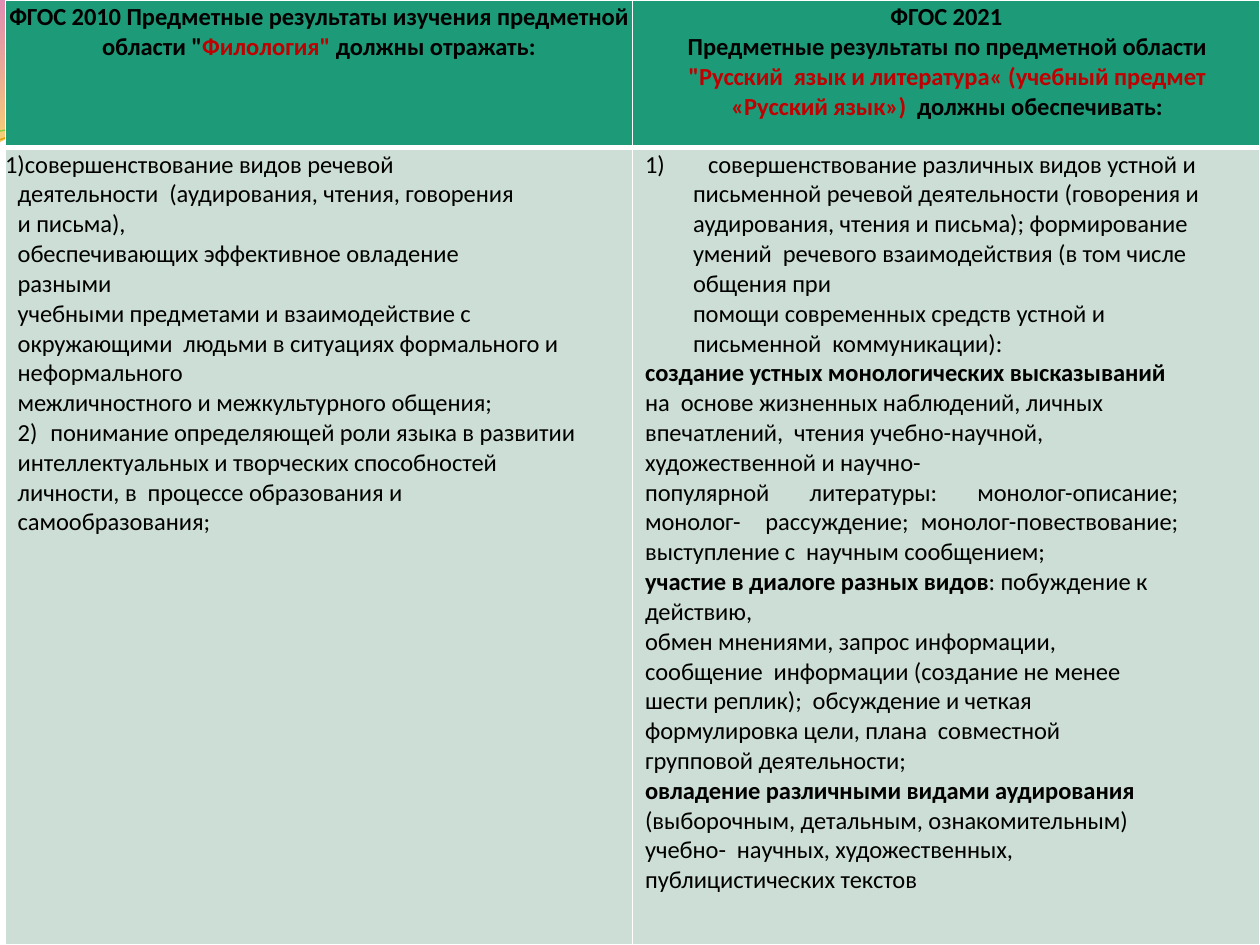
from lxml import etree
from pptx import Presentation
from pptx.dml.color import RGBColor
from pptx.enum.text import PP_ALIGN
from pptx.oxml.ns import qn
from pptx.util import Inches, Pt

LEFT, MID, JUST = PP_ALIGN.LEFT, PP_ALIGN.CENTER, PP_ALIGN.JUSTIFY
WHITE = RGBColor(0xFF, 0xFF, 0xFF)
BLACK = RGBColor(0, 0, 0)
RED = RGBColor(0xC0, 0, 0)
GREEN = RGBColor(0x1D, 0x9A, 0x78)
PALE = RGBColor(0xCC, 0xDE, 0xD5)
PINK = RGBColor(0xBD, 0x00, 0x59)
AMBER = RGBColor(0xF0, 0xAB, 0x00)
OCHRE = RGBColor(0xC3, 0x8B, 0x00)
ROSE = RGBColor(0xE1, 0x00, 0x6B)
GOLD = RGBColor(0xE0, 0xA2, 0x09)
LIME = RGBColor(0x7F, 0xD1, 0x3B)

# Each paragraph: text (*accent*), align, left, right and first indent, tab, number
HEADS = [
    [("ФГОС 2010 Предметные результаты изучения предметной", MID, 0, 0, 0, 0, 0),
     ("области \"*Филология\" *должны отражать:", MID, 0, 0, 0, 0, 0)],
    [("ФГОС 2021", MID, 0, 0, 0, 0, 0),
     ("Предметные результаты по предметной области *\"Русский  язык и литература« "
      "(учебный предмет «Русский язык»)  *должны обеспечивать:", MID, 0.11, 0.1, 0, 0, 0)],
]
BODIES = [
    [("совершенствование видов речевой деятельности  (аудирования, чтения, "
      "говорения и письма),", LEFT, 0.1, 0.89, -0.1, 0.36, 1),
     ("обеспечивающих эффективное овладение разными", LEFT, 0.1, 0.89, 0, 0, 0),
     ("учебными предметами и взаимодействие с окружающими  людьми в ситуациях "
      "формального и неформального", LEFT, 0.1, 0.33, 0, 0, 0),
     ("межличностного и межкультурного общения;", LEFT, 0.1, 0.33, 0, 0, 0),
     ("понимание определяющей роли языка в развитии", LEFT, 0.36, 0.33, -0.26, 0.36, 2),
     ("интеллектуальных и творческих способностей личности, в  процессе "
      "образования и самообразования;", LEFT, 0.1, 0.33, 0, 0, 0)],
    [("1)\tсовершенствование различных видов устной и", LEFT, 0.1, 0.3, 0, 0.48, 0),
     ("письменной речевой деятельности (говорения и  аудирования, чтения и письма); "
      "формирование умений  речевого взаимодействия (в том числе общения при",
      LEFT, 0.48, 0.3, 0, 0, 0),
     ("помощи современных средств устной и письменной  коммуникации):",
      LEFT, 0.48, 0.3, 0, 0, 0),
     ("*создание устных монологических высказываний *на  основе жизненных наблюдений, "
      "личных впечатлений,  чтения учебно-научной, художественной и научно-",
      LEFT, 0.1, 0.65, 0, 0, 0),
     ("популярной литературы: монолог-описание; монолог-  рассуждение; "
      "монолог-повествование; выступление с  научным сообщением;",
      JUST, 0.1, 0.65, 0, 0, 0),
     ("*участие в диалоге разных видов*: побуждение к действию,",
      LEFT, 0.1, 0.65, 0, 0, 0),
     ("обмен мнениями, запрос информации, сообщение  информации (создание не менее "
      "шести реплик);  обсуждение и четкая формулировка цели, плана  совместной "
      "групповой деятельности;", LEFT, 0.1, 0.91, 0, 0, 0),
     ("*овладение различными видами аудирования  *(выборочным, детальным, "
      "ознакомительным) учебно-  научных, художественных, публицистических текстов",
      LEFT, 0.1, 0.8, 0, 0, 0)],
]

# Outlines: points (x, y) and cubic curves (two controls, end)
# Gradient stops: colour, place, opacity
BANDS = [
    ([(PINK, 0, 45), (AMBER, 1, 55)],
     [(0, 0), (4.4, -0.01),
      (4.76, 0.17, 6.64, 0.63, 7.58, 0.63), (8.53, 0.63, 9.58, 0.26, 10, 0.09),
      (10.01, 0.36),
      (9.83, 0.44, 8.7, 0.76, 7.46, 0.75), (6.22, 0.75, 3.82, 0.28, 2.57, 0.34),
      (1.29, 0.36, 0.46, 0.83, -0.01, 1.13)]),
    ([(OCHRE, 0, 30), (ROSE, 0.8, 45)],
     [(4.79, -0.01),
      (5.09, 0.11, 6.82, 0.62, 7.69, 0.65), (8.56, 0.69, 9.61, 0.32, 10, 0.21),
      (10, 0)]),
]
WAVES = [
    (GOLD, 0.85, [(0, 1.11), (0.48, 0.93, 1.58, 0.57, 2.77, 0.52),
                  (3.95, 0.47, 5.93, 0.89, 7.13, 0.8),
                  (8.33, 0.71, 9.38, 0.15, 9.98, -0.02)]),
    (LIME, 0.75, [(0, 1.04), (0.47, 0.96, 1.64, 0.61, 2.83, 0.56),
                  (4.03, 0.51, 5.97, 0.84, 7.17, 0.75),
                  (8.36, 0.67, 9.41, 0.21, 10, 0.06)]),
]

deck = Presentation()
deck.slide_width, deck.slide_height = Inches(10), Inches(7.5)
slide = deck.slides.add_slide(deck.slide_layouts[6])


def add(node, tag, **attrs):
    return etree.SubElement(node, qn(tag), attrs)


def draw(segs, close):
    """Draw a freeform, merging each run of three curve points into one cubic."""
    dots = [(Inches(x), Inches(y)) for seg in segs for x, y in zip(seg[::2], seg[1::2])]
    pen = slide.shapes.build_freeform(*dots[0])
    pen.add_line_segments(dots[1:], close=close)
    shape = pen.convert_to_shape()
    shape.shadow.inherit = False
    lines = iter(list(shape._element.iter(qn("a:lnTo"))))
    for seg in segs[1:]:
        line = next(lines)
        if len(seg) == 6:
            line.addprevious(curve := etree.Element(qn("a:cubicBezTo")))
            for part in (line, next(lines), next(lines)):
                curve.append(part[0])
                part.getparent().remove(part)
    return shape


for stops, segs in BANDS:
    band = draw(segs, True)
    band.line.fill.background()
    band.fill.gradient()
    band.fill.gradient_angle = 270
    for stop, (tint, place, alpha) in zip(band.fill.gradient_stops, stops):
        stop.color.rgb = tint
        stop.position = place
    for node, (tint, place, alpha) in zip(band._element.spPr.iter(qn("a:srgbClr")), stops):
        add(node, "a:alpha", val=str(alpha * 1000))

for tint, width, segs in WAVES:
    wave = draw(segs, False)
    wave.fill.background()
    wave.line.color.rgb = tint
    wave.line.width = Pt(width)

table = slide.shapes.add_table(2, 2, Inches(0.04), 0, Inches(9.96), Inches(7.5)).table
for col in table.columns:
    col.width = Inches(4.98)
for row, high in zip(table.rows, (1.17, 6.33)):
    row.height = Inches(high)

for y, (texts, shade, inset, lead) in enumerate([(HEADS, GREEN, 0.02, 2.1),
                                                (BODIES, PALE, 0.02, 2.4)]):
    for x, paras in enumerate(texts):
        cell = table.cell(y, x)
        edges = {"L": 1 if x else 0.5, "R": 1, "T": 3 if y else 0.5, "B": 0 if y else 3}
        for side, width in edges.items():
            if width:
                edge = add(cell._tc.get_or_add_tcPr(), "a:ln" + side, w=str(Pt(width)))
                add(add(edge, "a:solidFill"), "a:srgbClr", val=str(WHITE))
        cell.fill.solid()
        cell.fill.fore_color.rgb = shade
        margins = {"margin_left": 0, "margin_right": 0,
                   "margin_top": Inches(inset), "margin_bottom": 0}
        for name, value in margins.items():
            setattr(cell, name, value)

        frame = cell.text_frame
        for i, (text, align, left, right, first, tab, num) in enumerate(paras):
            para = frame.add_paragraph() if i else frame.paragraphs[0]
            para.alignment = align
            para.space_before = Pt(0 if i else lead)
            props = para._p.get_or_add_pPr()
            for name, value in {"marL": left, "marR": right, "indent": first}.items():
                props.set(name, str(Inches(value)))
            if num:
                add(props, "a:buAutoNum", type="arabicParenR", startAt=str(num))
            else:
                add(props, "a:buNone")
            if tab:
                add(add(props, "a:tabLst"), "a:tab", pos=str(Inches(tab)), algn="l")
            for k, part in enumerate(text.split("*")):
                if not part:
                    continue
                accent = k % 2 == 1
                run = para.add_run()
                run.text = part
                style = {"name": "Calibri", "size": Pt(14), "bold": y == 0 or accent}
                for name, value in style.items():
                    setattr(run.font, name, value)
                run.font.color.rgb = RED if accent and y == 0 else BLACK
                run._r.get_or_add_rPr().set("spc", "-5")

deck.save("out.pptx")
